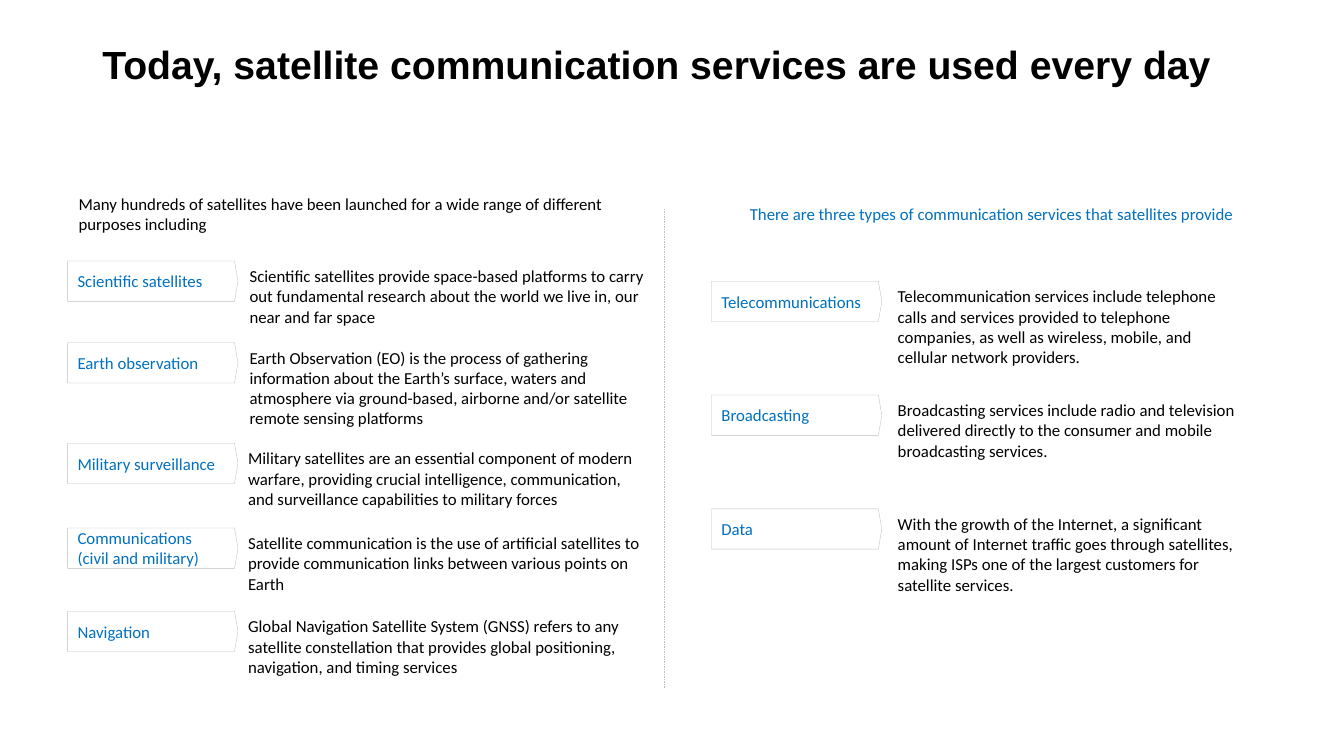
import pptx
import pptx.dml.color
import pptx.enum.dml
import pptx.enum.shapes
import pptx.enum.text
import pptx.oxml
import pptx.oxml.ns
import pptx.util

Pt = pptx.util.Pt
ANCHOR = pptx.enum.text.MSO_ANCHOR
ALIGN = pptx.enum.text.PP_ALIGN
COLORS = {"text": "000000", "accent": "0070C0", "rule": "BFBFBF"}


def rgb(name):
    return pptx.dml.color.RGBColor.from_string(COLORS[name])


def write(shape, text, color="text", anchor=ANCHOR.TOP, align=ALIGN.LEFT, font="Calibri", size=12, bold=False):
    frame = shape.text_frame
    frame.word_wrap = True
    frame.vertical_anchor = anchor
    paragraph = frame.paragraphs[0]
    paragraph.alignment = align
    run = paragraph.add_run()
    run.text = text
    run.font.name = font
    run.font.size = Pt(size)
    run.font.bold = bold
    run.font.color.rgb = rgb(color)
    return paragraph


presentation = pptx.Presentation()
presentation.slide_width = Pt(960)
presentation.slide_height = Pt(540)
slide = presentation.slides.add_slide(presentation.slide_layouts[6])

title = slide.shapes.add_textbox(Pt(66), Pt(28.75), Pt(828), Pt(104.4))
title_paragraph = write(title, "Today, satellite communication services are used every day", font="Arial", size=28, bold=True)
title_paragraph.line_spacing = 0.9

headings = [
    (49, "Many hundreds of satellites have been launched for a wide range of different purposes including", "text", ALIGN.LEFT),
    (505.4, "There are three types of communication services that satellites provide", "accent", ALIGN.CENTER),
]
for left, text, color, align in headings:
    heading = slide.shapes.add_textbox(Pt(left), Pt(141.8), Pt(406), Pt(21.6))
    write(heading, text, color, ANCHOR.MIDDLE, align)

divider = slide.shapes.add_connector(pptx.enum.shapes.MSO_CONNECTOR.STRAIGHT, Pt(474.5), Pt(149), Pt(474.5), Pt(491.8))
divider.line.color.rgb = rgb("rule")
divider.line.width = Pt(0.25)
divider.line.dash_style = pptx.enum.dml.MSO_LINE.DASH
divider._element.spPr.append(pptx.oxml.parse_xml("<a:effectLst %s/>" % pptx.oxml.ns.nsdecls("a")))

purposes = [
    (186.5, 171.2, 47.5, "Scientific satellites",
     "Scientific satellites provide space-based platforms to carry out fundamental research about the world we live in, our near and far space"),
    (244.8, 171.2, 61.2, "Earth observation",
     "Earth Observation (EO) is the process of gathering information about the Earth’s surface, waters and atmosphere via ground-based, airborne and/or satellite remote sensing platforms"),
    (316.6, 170.1, 50.4, "Military surveillance",
     "Military satellites are an essential component of modern warfare, providing crucial intelligence, communication, and surveillance capabilities to military forces"),
    (377.2, 170.1, 49, "Communications (civil and military)",
     "Satellite communication is the use of artificial satellites to provide communication links between various points on Earth"),
    (436.6, 170.1, 50.4, "Navigation",
     "Global Navigation Satellite System (GNSS) refers to any satellite constellation that provides global positioning, navigation, and timing services"),
]
services = [
    ("Telecommunications",
     "Telecommunication services include telephone calls and services provided to telephone companies, as well as wireless, mobile, and cellular network providers."),
    ("Broadcasting",
     "Broadcasting services include radio and television delivered directly to the consumer and mobile broadcasting services."),
    ("Data",
     "With the growth of the Internet, a significant amount of Internet traffic goes through satellites, making ISPs one of the largest customers for satellite services."),
]

rows = [(48.3, top, left, 470.2 - left, height, label, text) for top, left, height, label, text in purposes]
rows += [(508.2, 200.9 + 81.3 * index, 634.2, 259.2, 76.3, label, text) for index, (label, text) in enumerate(services)]

for label_left, top, text_left, text_width, text_height, label, text in rows:
    group = slide.shapes.add_group_shape()
    tag = group.shapes.add_shape(pptx.enum.shapes.MSO_SHAPE.PENTAGON, Pt(label_left), Pt(top), Pt(121.7), Pt(28.8))
    tag.adjustments[0] = 0.086
    tag.shadow.inherit = False
    tag.fill.background()
    tag.line.color.rgb = rgb("rule")
    tag.line.width = Pt(0.25)
    write(tag, label, "accent", ANCHOR.MIDDLE)
    description = group.shapes.add_textbox(Pt(text_left), Pt(top), Pt(text_width), Pt(text_height))
    write(description, text)

presentation.save("out.pptx")
